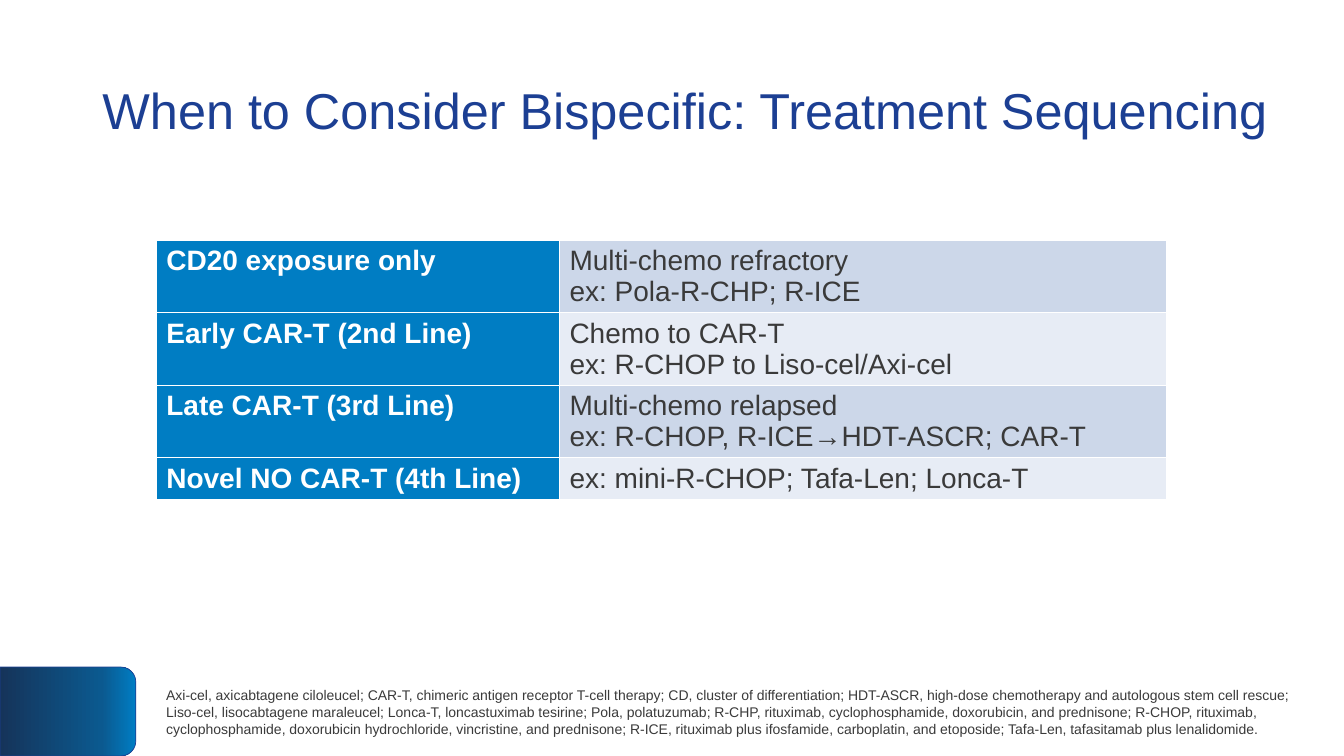
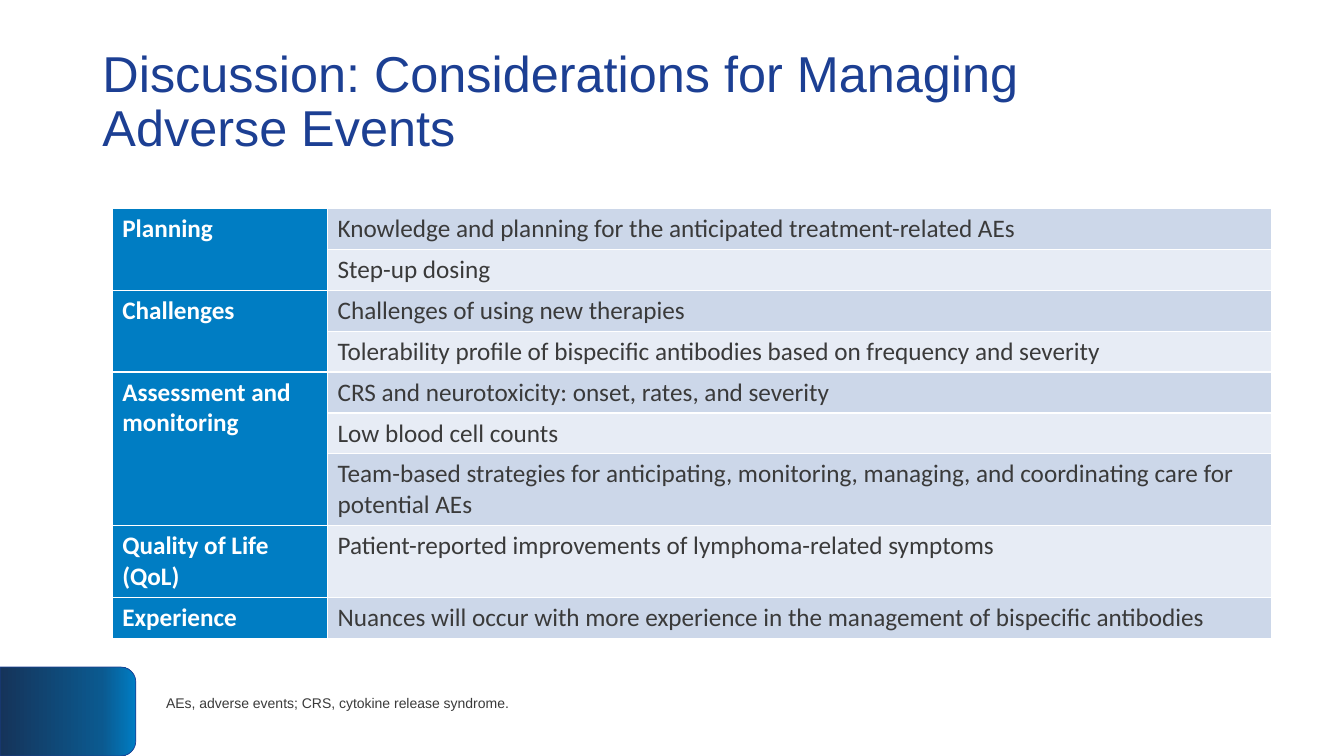
from lxml import etree
from pptx import Presentation
from pptx.dml.color import RGBColor
from pptx.enum.shapes import MSO_SHAPE
from pptx.enum.text import MSO_ANCHOR, MSO_AUTO_SIZE, PP_ALIGN
from pptx.oxml.ns import qn
from pptx.util import Pt

TAB = MSO_SHAPE.ROUND_2_SAME_RECTANGLE
MIDDLE = MSO_ANCHOR.MIDDLE
FIXED = MSO_AUTO_SIZE.NONE
LEFT = PP_ALIGN.LEFT

HUES = {"title": "1C3F93", "text": "3A3A3A", "white": "FFFFFF", "blue": "007DC3",
        "mid": "0B598F", "navy": "15345A", "band": "CCD7E9", "pale": "E7ECF5"}
STOPS = [(0, "blue"), (25, "mid"), (100, "navy")]
FRAME = {"word_wrap": True, "auto_size": FIXED, "vertical_anchor": MIDDLE}
TITLE = {"name": "Arial", "size": Pt(36), "bold": False}
NOTE = {"name": "Arial", "size": Pt(10), "bold": False}
BADGE = (0, 476.5, 97, 63.5)

SEQUENCE = {
    "title": "When to Consider Bispecific: Treatment Sequencing",
    "head": (66, 29, 884, 104),
    "note": "Axi-cel, axicabtagene ciloleucel; CAR-T, chimeric antigen receptor T-cell therapy; "
            "CD, cluster of differentiation; HDT-ASCR, high-dose chemotherapy and autologous stem "
            "cell rescue; Liso-cel, lisocabtagene maraleucel; Lonca-T, loncastuximab tesirine; "
            "Pola, polatuzumab; R-CHP, rituximab, cyclophosphamide, doxorubicin, and prednisone; "
            "R-CHOP, rituximab, cyclophosphamide, doxorubicin hydrochloride, vincristine, and "
            "prednisone; R-ICE, rituximab plus ifosfamide, carboplatin, and etoposide; Tafa-Len, "
            "tafasitamab plus lenalidomide.",
    "foot": (111.6, 476.6, 838.8, 63.4),
    "spot": (111.6, 171.5),
    "cols": (288, 434),
    "rows": (51.8, 51.8, 51.8, 29.2),
    "font": {"name": "Arial", "size": Pt(20)},
    "groups": [
        ("CD20 exposure only", ["Multi-chemo refractory\nex: Pola-R-CHP; R-ICE"]),
        ("Early CAR-T (2nd Line)", ["Chemo to CAR-T\nex: R-CHOP to Liso-cel/Axi-cel"]),
        ("Late CAR-T (3rd Line)", ["Multi-chemo relapsed\nex: R-CHOP, R-ICE→HDT-ASCR; CAR-T"]),
        ("Novel NO CAR-T (4th Line)", ["ex: mini-R-CHOP; Tafa-Len; Lonca-T"]),
    ],
}
EVENTS = {
    "title": "Discussion: Considerations for Managing\vAdverse Events",
    "head": (66, 22.3, 828, 103),
    "note": "AEs, adverse events; CRS, cytokine release syndrome.",
    "foot": (111.6, 476.6, 838.8, 51.4),
    "spot": (80.2, 149),
    "cols": (153.8, 674),
    "rows": (29.2,) * 6 + (51.4, 51.4, 29.2),
    "font": {"name": "Calibri", "size": Pt(18)},
    "groups": [
        ("Planning", ["Knowledge and planning for the anticipated treatment-related AEs",
                      "Step-up dosing"]),
        ("Challenges", ["Challenges of using new therapies",
                        "Tolerability profile of bispecific antibodies based on frequency "
                        "and severity"]),
        ("Assessment and monitoring",
         ["CRS and neurotoxicity: onset, rates, and severity",
          "Low blood cell counts",
          "Team-based strategies for anticipating, monitoring, managing, and coordinating "
          "care for potential AEs"]),
        ("Quality of Life (QoL)", ["Patient-reported improvements of lymphoma-related symptoms"]),
        ("Experience", ["Nuances will occur with more experience in the management of "
                        "bispecific antibodies"]),
    ],
}


def tint(key):
    """Return the named colour."""
    return RGBColor.from_string(HUES[key])


def apply(item, style):
    """Set each attribute in the style on the item."""
    for key, value in style.items():
        setattr(item, key, value)


def place(shape, box):
    """Move a shape to a box given in points."""
    apply(shape, dict(zip(("left", "top", "width", "height"), map(Pt, box))))


def write(frame, text, font, hue, space=1.0):
    """Fill a text frame with formatted paragraphs."""
    frame.text = text
    for para in frame.paragraphs:
        apply(para, {"alignment": LEFT, "line_spacing": space})
        for run in para.runs:
            apply(run.font, font)
            run.font.color.rgb = tint(hue)


def badge(slide, box):
    """Draw the gradient corner tab, turned to fill the box."""
    x, y, w, h = box
    shape = slide.shapes.add_shape(TAB, 0, 0, 0, 0)
    place(shape, (x + (w - h) / 2, y + (h - w) / 2, h, w))
    shape.rotation = 90
    shape.shadow.inherit = False
    shape.line.color.rgb = tint("title")
    shape.line.width = Pt(0.5)
    shape.fill.gradient()
    shape.fill.gradient_angle = 270
    stops = next(shape.element.iter(qn("a:gsLst")))
    stops.clear()
    for pos, hue in STOPS:
        stop = etree.SubElement(stops, qn("a:gs"), pos=str(pos * 1000))
        etree.SubElement(stop, qn("a:srgbClr"), val=HUES[hue])


def header(slide, text, box):
    """Place the slide title."""
    shape = slide.shapes.title
    place(shape, box)
    apply(shape.text_frame, FRAME)
    write(shape.text_frame, text, TITLE, "title", 0.9)


def footer(slide, text, box):
    """Place the list of abbreviations."""
    frame = slide.shapes.add_textbox(*map(Pt, box)).text_frame
    apply(frame, FRAME)
    write(frame, text, NOTE, "text")


def edge(cell):
    """Give a cell thin white borders."""
    props = cell._tc.get_or_add_tcPr()
    for spot, side in enumerate(("lnL", "lnR", "lnT", "lnB")):
        line = etree.Element(qn("a:" + side), w=str(Pt(1)))
        fill = etree.SubElement(line, qn("a:solidFill"))
        etree.SubElement(fill, qn("a:srgbClr"), val=HUES["white"])
        props.insert(spot, line)


def paint(cell, hue):
    """Fill and outline a cell."""
    cell.fill.solid()
    cell.fill.fore_color.rgb = tint(hue)
    edge(cell)


def grid(slide, data):
    """Draw the table of labelled groups."""
    cols, rows = data["cols"], data["rows"]
    box = (*data["spot"], sum(cols), sum(rows))
    table = slide.shapes.add_table(len(rows), len(cols), *map(Pt, box)).table
    apply(table, {"first_row": False, "horz_banding": False})
    for col, width in zip(table.columns, cols):
        col.width = Pt(width)
    for row, height in zip(table.rows, rows):
        row.height = Pt(height)
    top = 0
    for label, items in data["groups"]:
        for num, item in enumerate(items, top):
            paint(table.cell(num, 0), "blue")
            cell = table.cell(num, 1)
            paint(cell, "pale" if num % 2 else "band")
            write(cell.text_frame, item, {**data["font"], "bold": False}, "text")
        head = table.cell(top, 0)
        if len(items) > 1:
            head.merge(table.cell(num, 0))
        write(head.text_frame, label, {**data["font"], "bold": True}, "white")
        top += len(items)


def build(deck, data):
    """Add one table slide."""
    slide = deck.slides.add_slide(deck.slide_layouts[5])
    badge(slide, BADGE)
    header(slide, data["title"], data["head"])
    footer(slide, data["note"], data["foot"])
    grid(slide, data)


def main():
    """Build and save the deck."""
    deck = Presentation()
    apply(deck, {"slide_width": Pt(960), "slide_height": Pt(540)})
    for data in (SEQUENCE, EVENTS):
        build(deck, data)
    deck.save("out.pptx")


if __name__ == "__main__":
    main()
